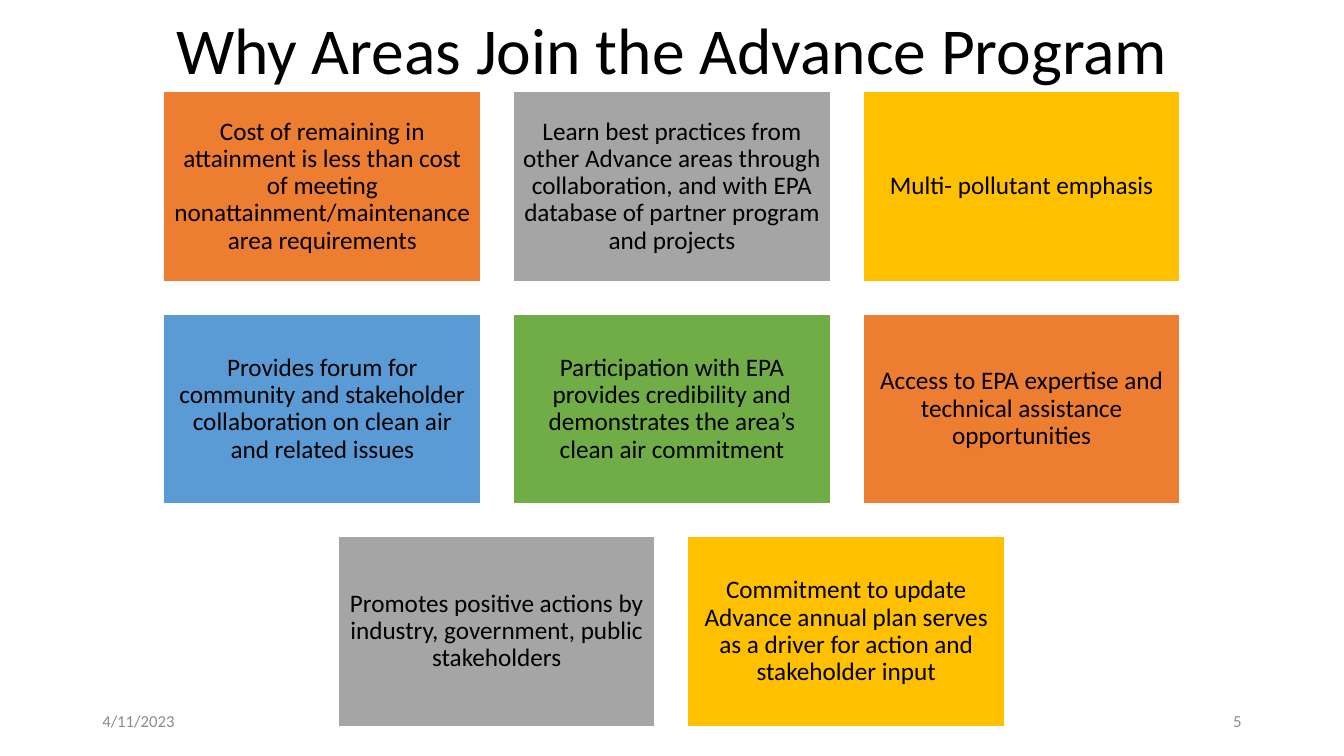
"""Build the slide listing why areas join the Advance Program."""
from dataclasses import dataclass

from pptx import Presentation
from pptx.dml.color import RGBColor
from pptx.enum.shapes import MSO_SHAPE
from pptx.enum.text import MSO_ANCHOR, PP_ALIGN
from pptx.util import Emu, Pt

TITLE = "Why Areas Join the Advance Program"
DATE = "4/11/2023"
SLIDE_NUMBER = "5"
REASON_ROWS = [
    [
        "Cost of remaining in attainment is less than cost of meeting "
        "nonattainment/maintenance area requirements",
        "Learn best practices from other Advance areas through collaboration, "
        "and with EPA database of partner program and projects",
        "Multi- pollutant emphasis",
    ],
    [
        "Provides forum for community and stakeholder collaboration on clean "
        "air and related issues",
        "Participation with EPA provides credibility and demonstrates the "
        "area’s clean air commitment",
        "Access to EPA expertise and technical assistance opportunities",
    ],
    [
        "Promotes positive actions by industry, government, public stakeholders",
        "Commitment to update Advance annual plan serves as a driver for "
        "action and stakeholder input",
    ],
]


@dataclass(frozen=True)
class Theme:
    """Colours, font and type sizes of the slide."""
    font: str = "Calibri"
    text: str = "000000"
    muted: str = "8C8C8C"
    outline: str = "FFFFFF"
    cards: tuple = ("ED7D31", "A5A5A5", "FFC000", "5B9BD5", "70AD47")
    title_size: float = 46.8
    card_size: float = 18
    footer_size: float = 12


THEME = Theme()
EMU_PER_PX = 9525
SLIDE_WIDTH, SLIDE_HEIGHT = 1280, 720
MARGIN = 88
CARD_WIDTH, CARD_HEIGHT, CARD_GAP = 302, 181, 31
CARDS_TOP = 87
CARD_INSET = 7
FOOTER_TOP, FOOTER_WIDTH, FOOTER_HEIGHT = 667, 288, 38


def px(*lengths):
    """Turn pixel lengths into EMU."""
    return [Emu(length * EMU_PER_PX) for length in lengths]


def write(shape, text, size, color, alignment, line_spacing=1.0):
    """Set and format the single paragraph of a shape."""
    frame = shape.text_frame
    frame.text = text
    frame.word_wrap = True
    frame.vertical_anchor = MSO_ANCHOR.MIDDLE
    paragraph = frame.paragraphs[0]
    paragraph.alignment = alignment
    paragraph.line_spacing = line_spacing
    font = paragraph.runs[0].font
    font.name = THEME.font
    font.size = Pt(size)
    font.color.rgb = RGBColor.from_string(color)


def add_card(slide, left, top, text, fill):
    """Add one filled reason card."""
    card = slide.shapes.add_shape(
        MSO_SHAPE.RECTANGLE, *px(left, top, CARD_WIDTH, CARD_HEIGHT))
    card.shadow.inherit = False
    card.fill.solid()
    card.fill.fore_color.rgb = RGBColor.from_string(fill)
    card.line.color.rgb = RGBColor.from_string(THEME.outline)
    card.line.width = Pt(1)
    frame = card.text_frame
    (inset,) = px(CARD_INSET)
    frame.margin_left = frame.margin_right = inset
    frame.margin_top = frame.margin_bottom = inset
    write(card, text, THEME.card_size, THEME.text, PP_ALIGN.CENTER, 0.9)


def add_cards(slide):
    """Lay out the reasons in centred rows, cycling through the colours."""
    card_count = 0
    for row, reasons in enumerate(REASON_ROWS):
        row_width = len(reasons) * (CARD_WIDTH + CARD_GAP) - CARD_GAP
        row_left = (SLIDE_WIDTH - row_width) // 2
        top = CARDS_TOP + row * (CARD_HEIGHT + CARD_GAP)
        for column, reason in enumerate(reasons):
            left = row_left + column * (CARD_WIDTH + CARD_GAP)
            fill = THEME.cards[card_count % len(THEME.cards)]
            add_card(slide, left, top, reason, fill)
            card_count += 1


def add_footer(slide, left, text, alignment):
    """Add one small footer text."""
    footer = slide.shapes.add_textbox(
        *px(left, FOOTER_TOP, FOOTER_WIDTH, FOOTER_HEIGHT))
    write(footer, text, THEME.footer_size, THEME.muted, alignment)


def main():
    """Create and save the presentation."""
    presentation = Presentation()
    presentation.slide_width, presentation.slide_height = px(
        SLIDE_WIDTH, SLIDE_HEIGHT)
    slide = presentation.slides.add_slide(presentation.slide_layouts[6])
    title = slide.shapes.add_textbox(
        *px(MARGIN, 14, SLIDE_WIDTH - 2 * MARGIN, 73))
    write(title, TITLE, THEME.title_size, THEME.text, PP_ALIGN.CENTER, 0.9)
    add_cards(slide)
    add_footer(slide, MARGIN, DATE, PP_ALIGN.LEFT)
    add_footer(slide, SLIDE_WIDTH - MARGIN - FOOTER_WIDTH, SLIDE_NUMBER,
               PP_ALIGN.RIGHT)
    presentation.save("out.pptx")


if __name__ == "__main__":
    main()
